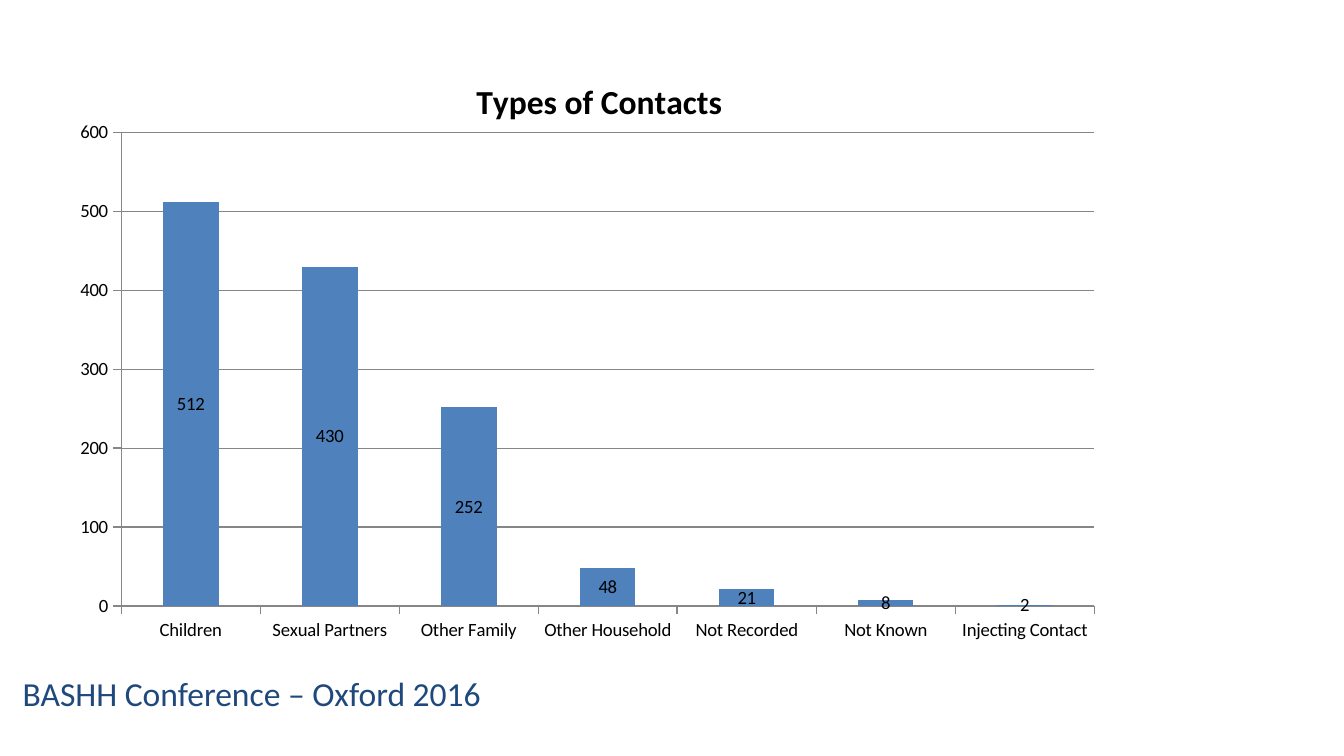
from lxml import etree
from pptx import Presentation, util as u
from pptx.chart.data import CategoryChartData
from pptx.dml.color import RGBColor
from pptx.enum import chart as ch
from pptx.oxml.ns import qn

WIDE = 10
HIGH = WIDE * 9 / 16
FOOT = "BASHH Conference – Oxford 2016"
TITLE = "Types of Contacts"
DATA = {
    "Children": 512,
    "Sexual Partners": 430,
    "Other Family": 252,
    "Other Household": 48,
    "Not Recorded": 21,
    "Not Known": 8,
    "Injecting Contact": 2,
}
INK, NAVY, BLUE, GREY = "000000", "1F497D", "4F81BD", "868686"


def style(font, size, color, bold=False):
    """Set the face, size, colour and weight of a font."""
    font.name, font.size, font.bold = "Calibri", u.Pt(size), bold
    font.color.rgb = RGBColor.from_string(color)


def rule(line):
    """Give a chart line its thin grey look."""
    line.color.rgb = RGBColor.from_string(GREY)


def place(node, index, **parts):
    """Give a chart part a manual layout in shares of the chart."""
    for old in node.findall(qn("c:layout")):
        node.remove(old)
    layout = etree.Element(qn("c:layout"))
    manual = etree.SubElement(layout, qn("c:manualLayout"))
    for tag, val in parts.items():
        etree.SubElement(manual, qn("c:" + tag)).set("val", str(val))
    node.insert(index, layout)


def add_foot(slide):
    """Write the conference line at the foot of the slide."""
    box = slide.shapes.add_textbox(
        u.Inches(0.07), u.Inches(4.96), u.Inches(4.78), u.Inches(0.69))
    frame = box.text_frame
    frame.word_wrap = True
    frame.text = FOOT
    style(frame.paragraphs[0].runs[0].font, 18, NAVY)


def add_bars(slide):
    """Draw the column chart of contacts."""
    data = CategoryChartData()
    data.categories = list(DATA)
    data.add_series("Series 1", list(DATA.values()))
    chart = slide.shapes.add_chart(
        ch.XL_CHART_TYPE.COLUMN_CLUSTERED, u.Inches(0.43), u.Inches(0.21),
        u.Inches(7.87), u.Inches(4.65), data).chart
    style(chart.font, 10, INK)
    chart.has_legend = False

    chart.has_title = True
    title = chart.chart_title
    title.text_frame.text = TITLE
    style(title.text_frame.paragraphs[0].runs[0].font, 18, INK, True)
    title.include_in_layout = True
    place(title._element, 1, xMode="edge", yMode="edge", x=0.39, y=0.07)

    for axis in (chart.category_axis, chart.value_axis):
        axis.major_tick_mark = ch.XL_TICK_MARK.OUTSIDE
        axis.minor_tick_mark = ch.XL_TICK_MARK.NONE
        rule(axis.format.line)
    scale = chart.value_axis
    scale.minimum_scale, scale.maximum_scale, scale.major_unit = 0, 600, 100
    scale.has_major_gridlines = True
    rule(scale.major_gridlines.format.line)

    plot = chart.plots[0]
    plot.gap_width, plot.vary_by_categories = 150, False
    fill = plot.series[0].format.fill
    fill.solid()
    fill.fore_color.rgb = RGBColor.from_string(BLUE)
    labels = plot.series[0].data_labels
    labels.show_value = True
    labels.position = ch.XL_LABEL_POSITION.CENTER
    style(labels.font, 10, INK)
    area = chart._chartSpace.find(".//" + qn("c:plotArea"))
    place(area, 0, layoutTarget="inner", xMode="edge", yMode="edge",
          x=0.06, y=0.167, w=0.92, h=0.758)


def main():
    """Build and save the slide."""
    deck = Presentation()
    deck.slide_width, deck.slide_height = u.Inches(WIDE), u.Inches(HIGH)
    slide = deck.slides.add_slide(deck.slide_layouts[6])
    add_foot(slide)
    add_bars(slide)
    deck.save("out.pptx")


if __name__ == "__main__":
    main()
